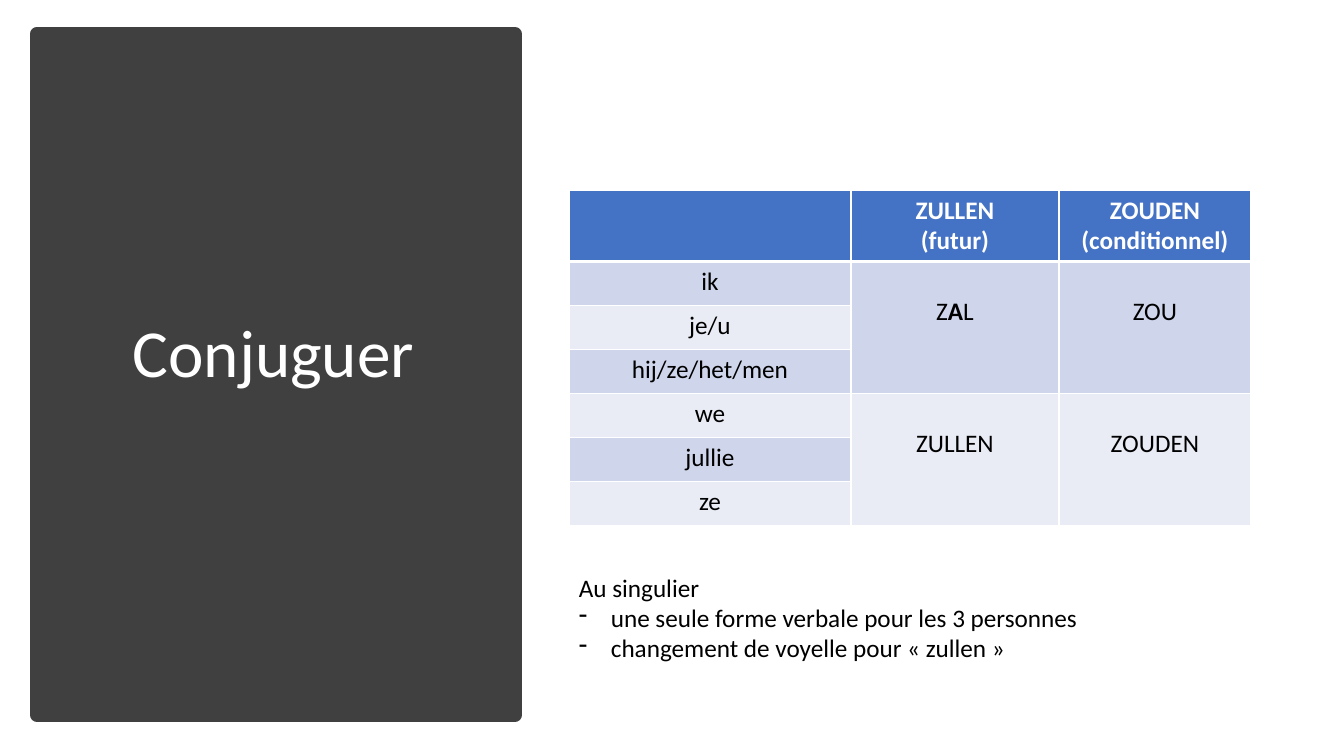
import dataclasses
import typing

import lxml.etree
import pptx
import pptx.dml.color
import pptx.enum.shapes
import pptx.enum.text
import pptx.oxml.ns
import pptx.util

EMU_PER_PX = 914400 / 100.8
FONT = "Calibri"
WHITE, BLACK, CHARCOAL = "FFFFFF", "000000", "404040"
HEADER_BLUE = "4472C4"
BANDS = ("CFD5EA", "E9EBF5")
CENTER = pptx.enum.text.PP_ALIGN.CENTER
COLUMN_WIDTHS = (282, 208, 192)
HEADER_HEIGHT, ROW_HEIGHT = 70, 44
PRONOUNS = ("ik", "je/u", "hij/ze/het/men", "we", "jullie", "ze")
PERSONS = 3
VERB_TOP_MARGIN = 35


@dataclasses.dataclass
class Box:
    """Place and size of a slide part, in px."""

    left: int
    top: int
    width: int
    height: int

    def emu(self) -> tuple[int, ...]:
        """Return left, top, width and height in EMU."""
        return tuple(px(value) for value in dataclasses.astuple(self))


@dataclasses.dataclass
class Piece:
    """A stretch of text that is bold or not."""

    text: str
    bold: bool = False


@dataclasses.dataclass
class Entry:
    """Content of one table cell, possibly spanning several rows."""

    row: int
    column: int
    lines: list[list[Piece]]
    color: str = BLACK
    span: int = 1


PANEL = Box(37, 34, 478, 681)
TITLE = Box(82, 82, 383, 547)
TABLE = Box(569, 190, sum(COLUMN_WIDTHS), HEADER_HEIGHT + ROW_HEIGHT * len(PRONOUNS))
REMARK = Box(569, 567, 723, 102)

HEADINGS = [("ZULLEN", "(futur)"), ("ZOUDEN", "(conditionnel)")]
VERB_FORMS = [
    [[Piece("Z"), Piece("A", True), Piece("L")], [Piece("ZOU")]],
    [[Piece("ZULLEN")], [Piece("ZOUDEN")]],
]
REMARK_INTRO = "Au singulier"
REMARK_POINTS = [
    "une seule forme verbale pour les 3 personnes",
    "changement de voyelle pour « zullen »",
]


def px(length: int) -> int:
    """Turn px into EMU."""
    return round(length * EMU_PER_PX)


def rgb(color: str) -> pptx.dml.color.RGBColor:
    """Turn a hex string into a colour."""
    return pptx.dml.color.RGBColor.from_string(color)


def apply(target: typing.Any, values: dict[str, typing.Any]) -> None:
    """Set each named attribute on the target."""
    for name, value in values.items():
        setattr(target, name, value)


def paint(part: typing.Any, color: str) -> None:
    """Give a part a solid fill."""
    part.fill.solid()
    part.fill.fore_color.rgb = rgb(color)


def write(paragraph: typing.Any, pieces: list[Piece], color: str, size: int = 18) -> None:
    """Write pieces of text into a paragraph."""
    for piece in pieces:
        run = paragraph.add_run()
        run.text = piece.text
        apply(run.font, {"name": FONT, "size": pptx.util.Pt(size), "bold": piece.bold})
        run.font.color.rgb = rgb(color)


def add_panel(slide: typing.Any) -> None:
    """Draw the dark panel behind the title."""
    panel = slide.shapes.add_shape(pptx.enum.shapes.MSO_SHAPE.RECTANGLE, *PANEL.emu())
    panel.shadow.inherit = False
    paint(panel, CHARCOAL)
    paint(panel.line, CHARCOAL)
    panel.line.width = pptx.util.Pt(10)
    slide.shapes.title._element.addprevious(panel._element)


def add_title(slide: typing.Any) -> None:
    """Place and format the title."""
    title = slide.shapes.title
    apply(title, dict(zip(("left", "top", "width", "height"), TITLE.emu())))
    title.text_frame.vertical_anchor = pptx.enum.text.MSO_ANCHOR.MIDDLE
    heading = title.text_frame.paragraphs[0]
    apply(heading, {"alignment": CENTER, "line_spacing": 0.9})
    write(heading, [Piece("Conjuguer")], WHITE, 48)


def add_borders(cell: typing.Any, top: int, bottom: int) -> None:
    """Draw white borders around a cell, with widths in points."""
    properties = cell._tc.get_or_add_tcPr()
    for side, width in {"L": 1, "R": 1, "T": top, "B": bottom}.items():
        edge = lxml.etree.SubElement(
            properties, pptx.oxml.ns.qn(f"a:ln{side}"), w=str(pptx.util.Pt(width))
        )
        fill = lxml.etree.SubElement(edge, pptx.oxml.ns.qn("a:solidFill"))
        lxml.etree.SubElement(fill, pptx.oxml.ns.qn("a:srgbClr"), val=WHITE)


def table_entries() -> list[Entry]:
    """List the headings, the pronouns and the verb forms."""
    headings = [
        Entry(0, column, [[Piece(line, True)] for line in lines], WHITE)
        for column, lines in enumerate(HEADINGS, 1)
    ]
    pronouns = [Entry(row, 0, [[Piece(name)]]) for row, name in enumerate(PRONOUNS, 1)]
    forms = [
        Entry(1 + number * PERSONS, column, [form], span=PERSONS)
        for number, group in enumerate(VERB_FORMS)
        for column, form in enumerate(group, 1)
    ]
    return headings + pronouns + forms


def add_conjugation(slide: typing.Any) -> None:
    """Build the conjugation table."""
    rows, columns = 1 + len(PRONOUNS), len(COLUMN_WIDTHS)
    table = slide.shapes.add_table(rows, columns, *TABLE.emu()).table
    table.horz_banding = False
    for column, width in zip(table.columns, COLUMN_WIDTHS):
        column.width = px(width)
    for index, row in enumerate(table.rows):
        row.height = px(ROW_HEIGHT if index else HEADER_HEIGHT)
        for cell in row.cells:
            add_borders(cell, top=3 if index == 1 else 1, bottom=1 if index else 3)
            paint(cell, BANDS[(index - 1) % 2] if index else HEADER_BLUE)
    for entry in table_entries():
        cell = table.cell(entry.row, entry.column)
        if entry.span > 1:
            cell.merge(table.cell(entry.row + entry.span - 1, entry.column))
            cell.margin_top = px(VERB_TOP_MARGIN)
        for number, pieces in enumerate(entry.lines):
            frame = cell.text_frame
            paragraph = frame.add_paragraph() if number else frame.paragraphs[0]
            paragraph.alignment = CENTER
            write(paragraph, pieces, entry.color)


def add_remark(slide: typing.Any) -> None:
    """Write the remark on the singular with its dashed points."""
    frame = slide.shapes.add_textbox(*REMARK.emu()).text_frame
    frame.word_wrap = True
    write(frame.paragraphs[0], [Piece(REMARK_INTRO)], BLACK)
    for point in REMARK_POINTS:
        paragraph = frame.add_paragraph()
        write(paragraph, [Piece(point)], BLACK)
        properties = paragraph._p.get_or_add_pPr()
        for name, indent in {"marL": 32, "indent": -32}.items():
            properties.set(name, str(px(indent)))
        lxml.etree.SubElement(properties, pptx.oxml.ns.qn("a:buChar"), char="-")


def main() -> None:
    """Build the slide and save it."""
    presentation = pptx.Presentation()
    apply(presentation, {"slide_width": px(1344), "slide_height": px(756)})
    slide = presentation.slides.add_slide(presentation.slide_layouts[5])
    add_title(slide)
    add_panel(slide)
    add_conjugation(slide)
    add_remark(slide)
    presentation.save("out.pptx")


if __name__ == "__main__":
    main()
